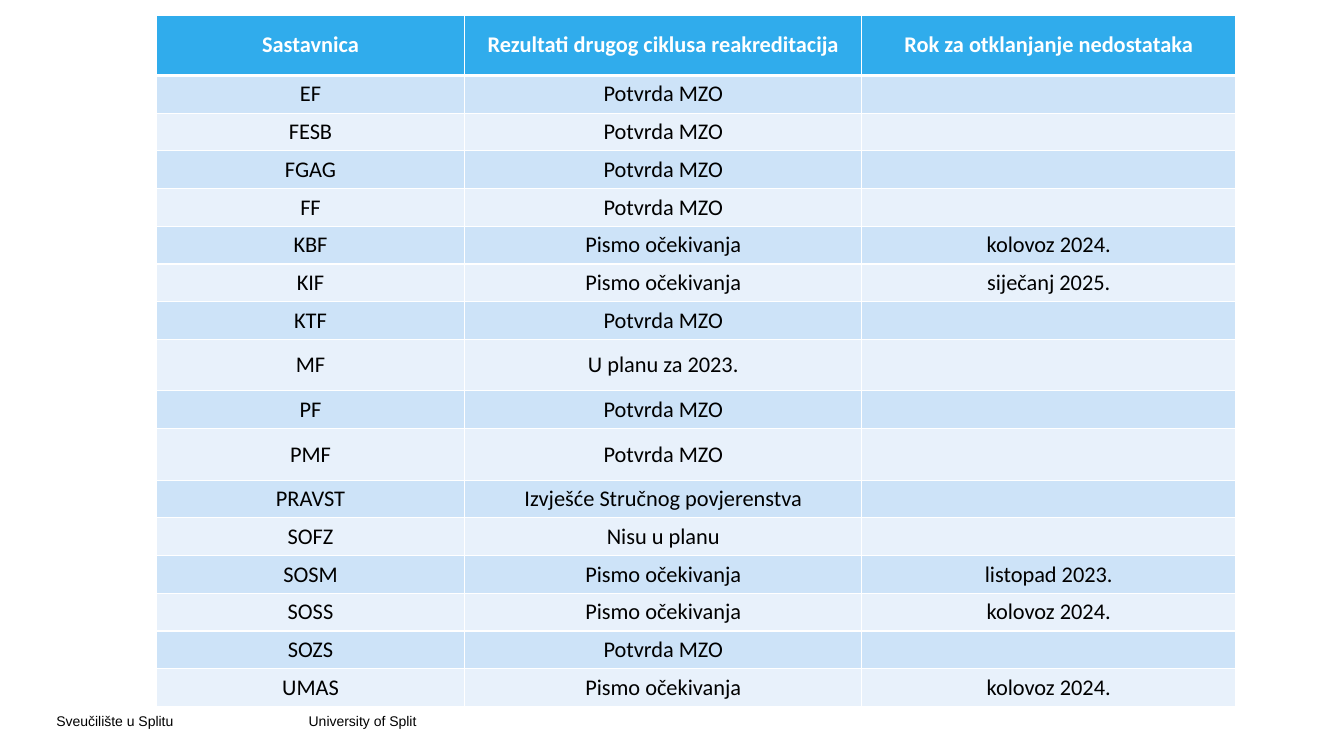
from lxml import etree
from pptx import Presentation
from pptx.dml.color import RGBColor
from pptx.enum.text import MSO_ANCHOR, PP_ALIGN
from pptx.oxml.ns import qn
from pptx.util import Cm, Pt

MIDDLE = MSO_ANCHOR.MIDDLE
CENTER = PP_ALIGN.CENTER
COLORS = {"header": "30ACEC", "odd": "CDE3F8", "even": "E8F1FB", "white": "FFFFFF", "black": "000000"}
BODY = {"name": "Calibri", "size": Pt(16), "bold": False}
HEADER = {**BODY, "bold": True}
FOOTER = {"name": "Arial", "size": Pt(10)}
CONFIRMED = "Potvrda MZO"
LETTER = "Pismo očekivanja"
COLUMNS = [7.77, 10.01, 9.42]
HEADER_HEIGHT, ROW_HEIGHT, TALL_HEIGHT = 1.52, 0.95, 1.3
TALL_ROWS = {"MF", "PMF"}
ROWS = [
    ("Sastavnica", "Rezultati drugog ciklusa reakreditacija", "Rok za otklanjanje nedostataka"),
    ("EF", CONFIRMED, ""),
    ("FESB", CONFIRMED, ""),
    ("FGAG", CONFIRMED, ""),
    ("FF", CONFIRMED, ""),
    ("KBF", LETTER, "kolovoz 2024."),
    ("KIF", LETTER, "siječanj 2025."),
    ("KTF", CONFIRMED, ""),
    ("MF", "U planu za 2023.", ""),
    ("PF", CONFIRMED, ""),
    ("PMF", CONFIRMED, ""),
    ("PRAVST", "Izvješće Stručnog povjerenstva", ""),
    ("SOFZ", "Nisu u planu", ""),
    ("SOSM", LETTER, "listopad 2023."),
    ("SOSS", LETTER, "kolovoz 2024."),
    ("SOZS", CONFIRMED, ""),
    ("UMAS", LETTER, "kolovoz 2024."),
]


def add_run(p, text, formats, color):
    """Add a formatted run to a paragraph."""
    r = p.add_run()
    r.text = text
    for name, value in formats.items():
        setattr(r.font, name, value)
    r.font.color.rgb = RGBColor.from_string(COLORS[color])


def set_borders(cell, widths):
    """Draw white cell borders with the given width in points per side."""
    tcPr = cell._tc.get_or_add_tcPr()
    for side, width in widths.items():
        ln = etree.SubElement(tcPr, qn(f"a:ln{side}"), w=str(Pt(width)))
        fill = etree.SubElement(ln, qn("a:solidFill"))
        etree.SubElement(fill, qn("a:srgbClr"), val=COLORS["white"])


def fill_cell(cell, text, row):
    """Write and format one cell according to its row."""
    set_borders(cell, {"L": 1, "R": 1, "T": 3 if row == 1 else 1, "B": 3 if row == 0 else 1})
    band = "header" if row == 0 else ("even", "odd")[row % 2]
    cell.fill.solid()
    cell.fill.fore_color.rgb = RGBColor.from_string(COLORS[band])
    cell.vertical_anchor = MIDDLE
    p = cell.text_frame.paragraphs[0]
    p.alignment = CENTER
    if text:
        add_run(p, text, HEADER if row == 0 else BODY, "white" if row == 0 else "black")
    else:
        p._p.get_or_add_endParaRPr().set("sz", str(BODY["size"].centipoints))


def row_height(row, name):
    """Return the height of a row in centimetres."""
    if row == 0:
        return HEADER_HEIGHT
    return TALL_HEIGHT if name in TALL_ROWS else ROW_HEIGHT


def add_results_table(s):
    """Add the table of reaccreditation results."""
    heights = [row_height(i, values[0]) for i, values in enumerate(ROWS)]
    frame = s.shapes.add_table(len(ROWS), len(COLUMNS), Cm(3.94), Cm(0.38), Cm(sum(COLUMNS)), Cm(sum(heights)))
    table = frame.table
    table.horz_banding = False
    for column, width in zip(table.columns, COLUMNS):
        column.width = Cm(width)
    for i, (values, height) in enumerate(zip(ROWS, heights)):
        table.rows[i].height = Cm(height)
        for j, text in enumerate(values):
            fill_cell(table.cell(i, j), text, i)


def add_footer(s):
    """Add the university name in both languages, set apart by a tab stop."""
    tf = s.shapes.add_textbox(Cm(1.17), Cm(17.65), Cm(11.43), Cm(1.02)).text_frame
    tf.word_wrap = True
    tf.vertical_anchor = MIDDLE
    p = tf.paragraphs[0]
    tabs = etree.SubElement(p._p.get_or_add_pPr(), qn("a:tabLst"))
    etree.SubElement(tabs, qn("a:tab"), pos=str(Cm(6.36)), algn="l")
    add_run(p, "Sveučilište u Splitu\tUniversity of Split", FOOTER, "black")


def main():
    """Build the slide and save it."""
    prs = Presentation()
    prs.slide_width, prs.slide_height = Cm(33.87), Cm(19.05)
    s = prs.slides.add_slide(prs.slide_layouts[6])
    add_footer(s)
    add_results_table(s)
    prs.save("out.pptx")


if __name__ == "__main__":
    main()
